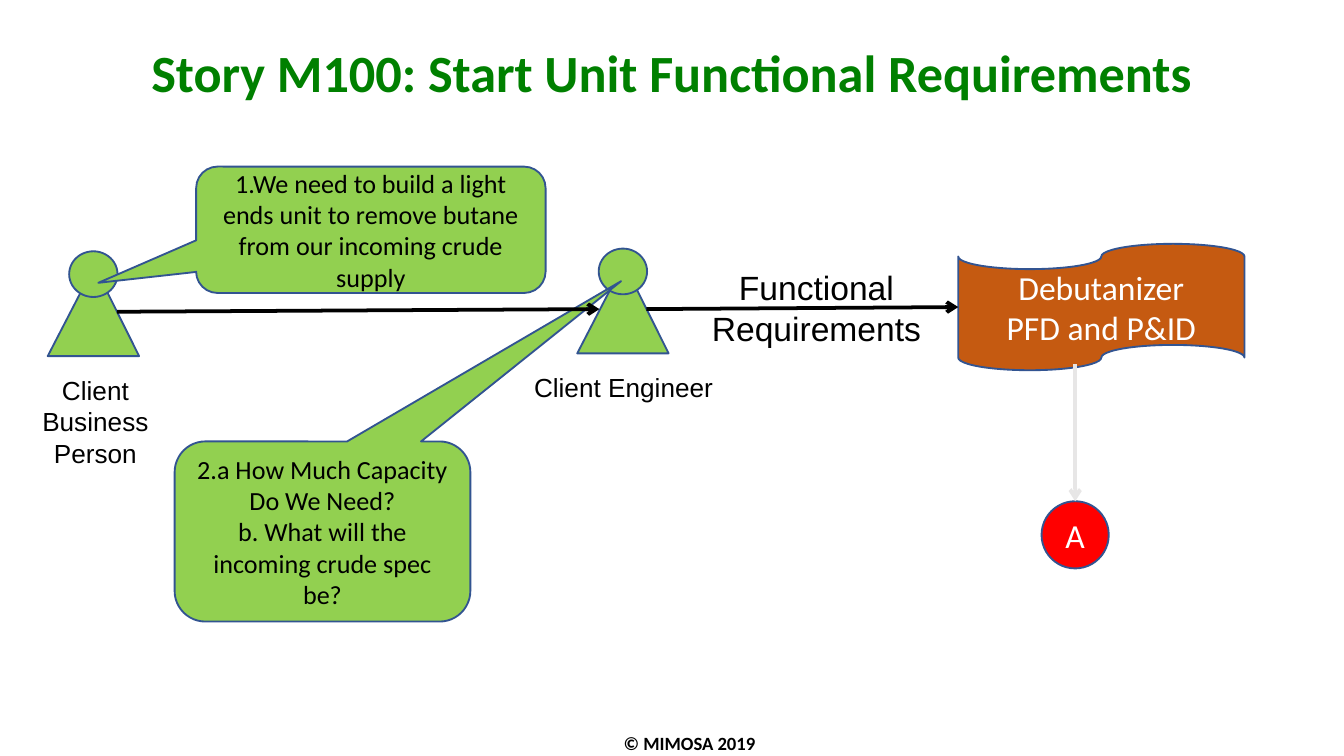
from typing import NamedTuple, Optional

from lxml.etree import SubElement
from pptx import Presentation
from pptx.dml.color import RGBColor
from pptx.enum.shapes import MSO_CONNECTOR, MSO_SHAPE
from pptx.enum.text import MSO_ANCHOR, PP_ALIGN
from pptx.oxml.ns import qn
from pptx.util import Inches, Pt

GREEN = RGBColor(0x92, 0xD0, 0x50)
TITLE_GREEN = RGBColor(0x00, 0x80, 0x00)
ORANGE = RGBColor(0xC5, 0x5A, 0x11)
RED = RGBColor(0xFF, 0x00, 0x00)
OUTLINE = RGBColor(0x32, 0x54, 0x91)
BLACK = RGBColor(0x00, 0x00, 0x00)
WHITE = RGBColor(0xFF, 0xFF, 0xFF)
PALE_GRAY = RGBColor(0xE7, 0xE6, 0xE6)

COLUMNS = 100
ROWS = COLUMNS * 9 / 16
CELL = Inches(0.1)


class Box(NamedTuple):
    """A place on the grid, in columns and rows."""
    column: float
    row: float
    columns: float
    rows: float

    def lengths(self) -> list[int]:
        return [round(value * CELL) for value in self]


class Style(NamedTuple):
    size: float
    font: str = "Calibri"
    color: RGBColor = BLACK
    bold: bool = False
    line_spacing: float = 1.0


class Label(NamedTuple):
    box: Box
    text: str
    style: Style
    anchor: MSO_ANCHOR = MSO_ANCHOR.TOP


class Actor(NamedTuple):
    column: float
    row: float
    label: Label


class Node(NamedTuple):
    kind: MSO_SHAPE
    box: Box
    fill: RGBColor
    text: str
    style: Style
    adjustments: tuple[float, ...] = ()


class Arrow(NamedTuple):
    start: tuple[float, float]
    end: tuple[float, float]
    color: RGBColor
    target: Optional[str] = None
    site: int = 0


ACTOR_LABEL = Style(14, "Arial")
SPEECH = Style(14)
NODE_TEXT = Style(18, color=WHITE)

LABELS = [
    Label(Box(41.7, 54, 19.2, 2.7), "© MIMOSA 2019", Style(10, bold=True)),
    Label(Box(2.3, 3, 95.3, 5.9), "Story M100: Start Unit Functional Requirements",
          Style(28, color=TITLE_GREEN, bold=True, line_spacing=0.9)),
    Label(Box(51.3, 19.4, 18.9, 7.1), "Functional Requirements", Style(18, "Arial")),
]
ACTORS = [
    Actor(3.55, 18.7, Label(Box(1.2, 27.35, 11.8, 8.1), "Client Business Person", ACTOR_LABEL)),
    Actor(42.95, 18.5, Label(Box(38.7, 27.15, 15.4, 3.4), "Client Engineer", ACTOR_LABEL)),
]
NODES = {
    "request": Node(
        MSO_SHAPE.ROUNDED_RECTANGULAR_CALLOUT, Box(14.6, 12.4, 26, 9.4), GREEN,
        "1.We need to build a light ends unit to remove butane from our incoming crude supply",
        SPEECH, (-0.78, 0.42, 0.17)),
    "questions": Node(
        MSO_SHAPE.ROUNDED_RECTANGULAR_CALLOUT, Box(13, 32.85, 22, 13.4), GREEN,
        "2.a How Much Capacity Do We Need?\nb. What will the incoming crude spec be?",
        SPEECH, (1.01, -1.39, 0.17)),
    "debutanizer": Node(
        MSO_SHAPE.FLOWCHART_PUNCHED_TAPE, Box(71.3, 18.15, 21.3, 9.4), ORANGE,
        "Debutanizer\nPFD and P&ID", NODE_TEXT),
    "next step": Node(
        MSO_SHAPE.OVAL, Box(77.5, 37.3, 5, 5), RED, "A", NODE_TEXT),
}
ARROWS = [
    Arrow((8.7, 23.2), (44.6, 23), BLACK),
    Arrow((48.1, 23), (71.3, 22.8), BLACK, "debutanizer", 1),
    Arrow((80, 27.1), (80, 37.3), PALE_GRAY, "next step", 0),
]


def write_text(shape, text: str, style: Style, anchor: MSO_ANCHOR) -> None:
    text_frame = shape.text_frame
    text_frame.text = text
    text_frame.word_wrap = True
    text_frame.vertical_anchor = anchor
    for paragraph in text_frame.paragraphs:
        paragraph.alignment = PP_ALIGN.CENTER
        paragraph.line_spacing = style.line_spacing
        for run in paragraph.runs:
            run.font.size = Pt(style.size)
            run.font.name = style.font
            run.font.bold = style.bold
            run.font.color.rgb = style.color


def add_label(slide, label: Label) -> None:
    shape = slide.shapes.add_textbox(*label.box.lengths())
    write_text(shape, label.text, label.style, label.anchor)


def add_outlined_shape(slide, kind: MSO_SHAPE, box: Box, fill: RGBColor,
                       adjustments: tuple[float, ...] = ()):
    shape = slide.shapes.add_shape(kind, *box.lengths())
    shape.shadow.inherit = False
    shape.fill.solid()
    shape.fill.fore_color.rgb = fill
    shape.line.color.rgb = OUTLINE
    shape.line.width = Pt(1)
    for index, value in enumerate(adjustments):
        shape.adjustments[index] = value
    return shape


def add_actor(slide, actor: Actor) -> None:
    """Draw a triangle body, a round head over it, and the role below."""
    body = Box(actor.column, actor.row + 1.1, 6.8, 6.7)
    head = Box(actor.column + 1.6, actor.row, 3.6, 3.4)
    add_outlined_shape(slide, MSO_SHAPE.ISOSCELES_TRIANGLE, body, GREEN, (0.51,))
    add_outlined_shape(slide, MSO_SHAPE.OVAL, head, GREEN)
    add_label(slide, actor.label)


def add_node(slide, node: Node):
    shape = add_outlined_shape(slide, node.kind, node.box, node.fill, node.adjustments)
    write_text(shape, node.text, node.style, MSO_ANCHOR.MIDDLE)
    return shape


def add_arrow(slide, arrow: Arrow, shapes: dict) -> None:
    points = [round(value * CELL) for value in arrow.start + arrow.end]
    connector = slide.shapes.add_connector(MSO_CONNECTOR.STRAIGHT, *points)
    if arrow.target:
        connector.end_connect(shapes[arrow.target], arrow.site)
    connector.line.color.rgb = arrow.color
    connector.line.width = Pt(2)
    properties = connector._element.spPr
    SubElement(properties.find(qn("a:ln")), qn("a:tailEnd"), type="arrow")
    SubElement(properties, qn("a:effectLst"))


def main() -> None:
    presentation = Presentation()
    presentation.slide_width = round(COLUMNS * CELL)
    presentation.slide_height = round(ROWS * CELL)
    slide = presentation.slides.add_slide(presentation.slide_layouts[6])
    for label in LABELS:
        add_label(slide, label)
    for actor in ACTORS:
        add_actor(slide, actor)
    shapes = {name: add_node(slide, node) for name, node in NODES.items()}
    for arrow in ARROWS:
        add_arrow(slide, arrow, shapes)
    presentation.save("out.pptx")


if __name__ == "__main__":
    main()
